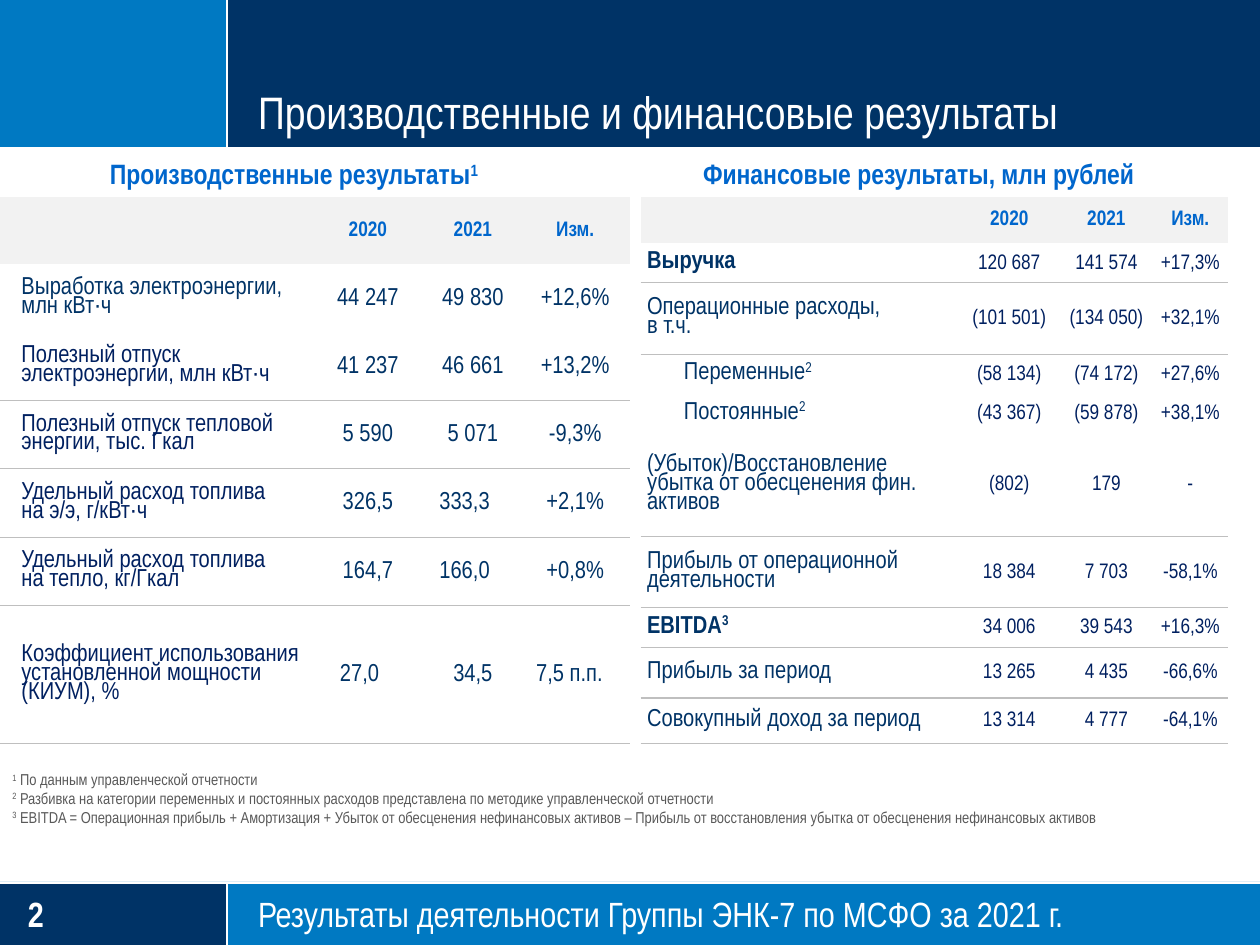
from lxml.etree import SubElement
from pptx import Presentation
from pptx.dml.color import RGBColor as RGB
from pptx.enum.shapes import MSO_CONNECTOR as CONN, MSO_SHAPE as SHAPE
from pptx.enum.text import MSO_ANCHOR as ANCHOR, PP_ALIGN as ALIGN
from pptx.oxml.ns import qn
from pptx.util import Pt

FONT = "Arial Narrow"
NAVY = RGB(0x00, 0x33, 0x66)
INK = RGB(0x00, 0x20, 0x60)
BLUE = RGB(0x00, 0x79, 0xC2)
ACCENT = RGB(0x00, 0x66, 0xCC)
WHITE = RGB(0xFF, 0xFF, 0xFF)
PALE = RGB(0xF2, 0xF2, 0xF2)
GREY = RGB(0x59, 0x59, 0x59)
RULE = RGB(0xBF, 0xBF, 0xBF)
NO_STYLE = "{2D5ABB26-0587-4C30-8999-92F81FD0307C}"
SPACING = 0.82
WIDTH, HEIGHT = 720, 540
TABLE_TOP = 112.5
HEADER = ("", "2020", "2021", "Изм.")

PRODUCTION = [
    ("Выработка электроэнергии,\vмлн кВт∙ч", "44 247", "49 830", "+12,6%"),
    ("Полезный отпуск электроэнергии, млн кВт∙ч", "41 237", "46 661", "+13,2%"),
    ("Полезный отпуск тепловой энергии, тыс. Гкал", "5 590", "5 071", "-9,3%"),
    ("Удельный расход топлива\vна э/э, г/кВт∙ч", "326,5", "333,3", "+2,1%"),
    ("Удельный расход топлива\vна тепло, кг/Гкал", "164,7", "166,0", "+0,8%"),
    ("Коэффициент использования установленной мощности (КИУМ), %",
     "27,0", "34,5", "7,5 п.п."),
]
PRODUCTION_NUDGE = {(4, 2): 9.5, (5, 2): 9.5, (6, 1): 9.5, (6, 3): 6.5}

FINANCE = [
    ("Выручка", "120 687", "141 574", "+17,3%"),
    ("Операционные расходы,\nв т.ч.", "(101 501)", "(134 050)", "+32,1%"),
    ("Переменные^2", "(58 134)", "(74 172)", "+27,6%"),
    ("Постоянные^2", "(43 367)", "(59 878)", "+38,1%"),
    ("(Убыток)/Восстановление убытка от обесценения фин. активов",
     "(802)", "179", "-"),
    ("Прибыль от операционной деятельности", "18 384", "7 703", "-58,1%"),
    ("EBITDA^3", "34 006", "39 543", "+16,3%"),
    ("Прибыль за период", "13 265", "4 435", "-66,6%"),
    ("Совокупный доход за период", "13 314", "4 777", "-64,1%"),
]

FOOTNOTES = "\n".join([
    "^1^ По данным управленческой отчетности",
    "^2^ Разбивка на категории переменных и постоянных расходов представлена "
    "по методике управленческой отчетности",
    "^3^ EBITDA = Операционная прибыль + Амортизация + Убыток от обесценения "
    "нефинансовых активов – Прибыль от восстановления убытка от обесценения "
    "нефинансовых активов",
])


def write(tf, text, size=14, color=NAVY, bold=False, align=ALIGN.LEFT,
          indent=0, spacing=None):
    for i, line in enumerate(text.split("\n")):
        p = tf.paragraphs[0] if i == 0 else tf.add_paragraph()
        p.alignment = align
        if spacing:
            p.line_spacing = spacing
        if indent:
            p._p.get_or_add_pPr().set("marL", str(Pt(indent)))
        for j, chunk in enumerate(line.split("\v")):
            if j:
                p.add_line_break()
            for k, part in enumerate(chunk.split("^")):
                if not part:
                    continue
                r = p.add_run()
                r.text = part
                f = r.font
                f.name, f.size, f.bold = FONT, Pt(size), bold
                f.color.rgb = color
                if k % 2:
                    f._element.set("baseline", "30000")


def add_text(s, text, x, y, w, h, anchor=ANCHOR.TOP, margins=(0, 0),
             wrap=True, **style):
    tf = s.shapes.add_textbox(Pt(x), Pt(y), Pt(w), Pt(h)).text_frame
    tf.word_wrap = wrap
    tf.vertical_anchor = anchor
    tf.margin_left = tf.margin_right = Pt(margins[0])
    tf.margin_top = tf.margin_bottom = Pt(margins[1])
    write(tf, text, **style)


def add_band(s, x, y, w, h, color):
    sp = s.shapes.add_shape(SHAPE.RECTANGLE, Pt(x), Pt(y), Pt(w), Pt(h))
    sp.shadow.inherit = False
    sp.fill.solid()
    sp.fill.fore_color.rgb = color
    sp.line.fill.background()


def add_rule(s, x1, y1, x2, y2):
    c = s.shapes.add_connector(CONN.STRAIGHT, Pt(x1), Pt(y1), Pt(x2), Pt(y2))
    c.line.color.rgb = WHITE
    c.line.width = Pt(1.25)
    SubElement(c._element.spPr, qn("a:effectLst"))


def set_border(cell, side):
    tc_pr = cell._tc.get_or_add_tcPr()
    ln = SubElement(tc_pr, qn(f"a:{side}"), w=str(Pt(0.75)))
    fill = SubElement(ln, qn("a:solidFill"))
    SubElement(fill, qn("a:srgbClr"), val=str(RULE))


def set_margins(cell, side, top, bottom, nudge=0):
    cell.margin_left, cell.margin_right = Pt(side), Pt(side + nudge)
    cell.margin_top, cell.margin_bottom = Pt(top), Pt(bottom)


def add_results(s, rows, x, widths, heights, ruled, label_style, value_style,
                nudges={}):
    table = s.shapes.add_table(len(heights), len(widths), Pt(x), Pt(TABLE_TOP),
                               Pt(sum(widths)), Pt(sum(heights))).table
    table._tbl.tblPr.find(qn("a:tableStyleId")).text = NO_STYLE
    table.horz_banding = table.first_row = False
    for col, w in zip(table.columns, widths):
        col.width = Pt(w)
    for row, h in zip(table.rows, heights):
        row.height = Pt(h)
    for i, texts in enumerate([HEADER, *rows]):
        for j, text in enumerate(texts):
            cell = table.cell(i, j)
            cell.vertical_anchor = ANCHOR.MIDDLE
            if i and j:
                set_margins(cell, 0.75, 0.75, 0, nudges.get((i, j), 0))
            else:
                set_margins(cell, 3.75, 2, 2)
            if i - 1 in ruled:
                set_border(cell, "lnT")
            if i in ruled:
                set_border(cell, "lnB")
            if i == 0:
                cell.fill.solid()
                cell.fill.fore_color.rgb = PALE
                style = dict(size=12, color=ACCENT, bold=True, align=ALIGN.CENTER)
            else:
                cell.fill.background()
                style = value_style if j else label_style(i)
            write(cell.text_frame, text, **style)


def production_label(i):
    return dict(color=NAVY if i == 1 else INK, indent=8.5, spacing=SPACING)


def finance_label(i):
    return dict(bold=i in (1, 7), indent=21 if i in (3, 4) else 0, spacing=SPACING)


def add_frame(s):
    add_band(s, 0, 0, WIDTH, 85, NAVY)
    add_band(s, 0, 504, WIDTH, 36, BLUE)
    add_band(s, 0, 504.5, 129.5, 35.5, NAVY)
    add_band(s, 0, 0, 129.5, 85, BLUE)
    for y in (84.5, 504.5):
        add_rule(s, 0, y, WIDTH, y)
    for top, bottom in ((504, HEIGHT), (0, 84.5)):
        add_rule(s, 129.5, top, 129.5, bottom)


def main():
    prs = Presentation()
    prs.slide_width, prs.slide_height = Pt(WIDTH), Pt(HEIGHT)
    s = prs.slides.add_slide(prs.slide_layouts[6])
    add_frame(s)
    add_text(s, FOOTNOTES, 0, 435.5, WIDTH, 40.5, anchor=ANCHOR.BOTTOM,
             margins=(7.2, 3.6), size=9, color=GREY)
    centred = dict(align=ALIGN.CENTER)
    add_results(s, FINANCE, 366, (181.5, 58.5, 52.5, 43.5),
                (26.5, 22.5, 41, 22.5, 22.5, 59, 41, 22.5, 29, 26),
                (1, 5, 6, 7, 8, 9), finance_label,
                dict(size=12, color=INK, **centred))
    add_results(s, PRODUCTION, 0, (177.5, 65.5, 54.5, 62.5),
                (38.5, *[39] * 5, 79), (2, 3, 5, 6), production_label,
                centred, PRODUCTION_NUDGE)
    add_text(s, "Производственные и финансовые результаты", 147.5, 0, 555, 79,
             anchor=ANCHOR.BOTTOM, size=26, color=WHITE)
    footer = dict(anchor=ANCHOR.MIDDLE, size=20, color=WHITE)
    add_text(s, "Результаты деятельности Группы ЭНК-7 по МСФО за 2021 г.",
             147.5, 510, 555, 24.5, **footer)
    heading = dict(size=16, color=ACCENT, bold=True, wrap=False, **centred)
    add_text(s, "Производственные результаты^1", 60, 89.5, 216, 19.5, **heading)
    add_text(s, "Финансовые результаты, млн рублей", 396.5, 89.5, 257, 19.5,
             **heading)
    add_text(s, "2", 16, 510, 95, 24.5, bold=True, **footer)
    prs.save("out.pptx")


if __name__ == "__main__":
    main()
